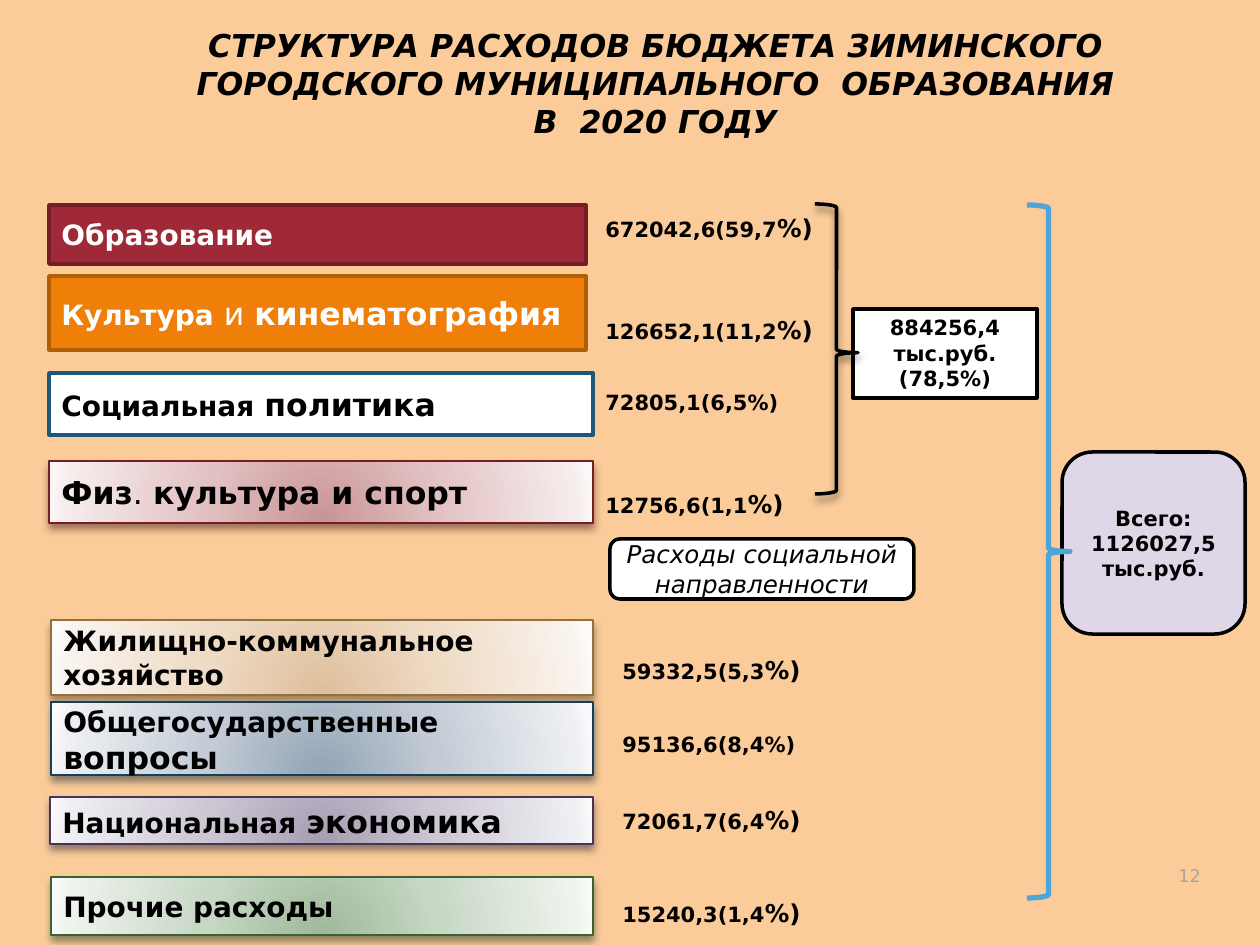
"""Builds the slide on the structure of city budget expenditure in 2020."""
from lxml import etree
from pptx import Presentation
from pptx.dml.color import RGBColor
from pptx.enum.shapes import MSO_SHAPE
from pptx.enum.text import MSO_ANCHOR, PP_ALIGN
from pptx.oxml.ns import qn
from pptx.util import Pt

RECT, ROUNDED, BRACE = MSO_SHAPE.RECTANGLE, MSO_SHAPE.ROUNDED_RECTANGLE, MSO_SHAPE.RIGHT_BRACE
TOP, MIDDLE, BOTTOM = MSO_ANCHOR.TOP, MSO_ANCHOR.MIDDLE, MSO_ANCHOR.BOTTOM
LEFT, CENTER, RIGHT = PP_ALIGN.LEFT, PP_ALIGN.CENTER, PP_ALIGN.RIGHT
PX = 914400 / 126
FONT = "DejaVu Sans"
BLACK, WHITE = "000000", "FFFFFF"
INSET, SMALL_LINE = 6, 24
GRADIENT_STOPS = (0, 43, 93, 100)

TITLE = ["СТРУКТУРА РАСХОДОВ БЮДЖЕТА ЗИМИНСКОГО ГОРОДСКОГО МУНИЦИПАЛЬНОГО  ОБРАЗОВАНИЯ",
         "В  2020 ГОДУ"]

# box, runs as (text, size, bold), text colour, fill or gradient, line colour, line width, shadow
SECTIONS = [
    ((49, 205, 537, 59), [("Образование", 16, True)], WHITE, "9F2936", "761E28", 2, None),
    ((49, 276, 537, 74), [("Культура", 16, True), (" и ", 18, False), ("кинематография", 18, True)],
     WHITE, "F07F09", "B25E07", 2, None),
    ((49, 373, 544, 62), [("Социальная", 16, True), (" ", 18, False), ("политика", 18, True)],
     BLACK, WHITE, "1B587C", 2, None),
    ((49, 461, 544, 62), [("Физ", 18, True), (". ", 18, False), ("культура и спорт", 18, True)],
     BLACK, ("C99396", "E2C1C2", "F6ECEC", "FDF8F8"), "771D27", 0.75, "390D12"),
    ((51, 620, 542, 75), [("Жилищно-коммунальное хозяйство", 16, True)],
     BLACK, ("DEBF9C", "EFDAC4", "F9F3ED", "FEFBF8"), "907141", 0.75, "45361E"),
    ((51, 702, 542, 73), [("Общегосударственные", 16, True), (" ", 18, False), ("вопросы", 18, True)],
     BLACK, ("94A3B5", "C3CCD6", "EDEFF2", "F9FAFB"), "13415D", 0.75, "091F2C"),
    ((50, 797, 543, 47), [("Национальная", 16, True), (" ", 18, False), ("экономика", 18, True)],
     BLACK, ("A69DB2", "CDC7D4", "EFEEF2", "FAF9FB"), "473559", 0.75, "22192B"),
    ((51, 877, 542, 58), [("Прочие расходы", 16, True)],
     BLACK, ("9EB99A", "C8D8C5", "EEF3ED", "F9FBF9"), "396330", 0.75, "1B2F17"),
]

# box, number, closing part, size of closing part, lines skipped above
AMOUNTS = [
    ((593, 207, 252, 43), "672042,6(59,7", "%)", 14, 0),
    ((593, 309, 252, 43), "126652,1(11,2", "%)", 14, 0),
    ((593, 360, 285, 89), "72805,1(6,5", "%)", 12, 1),
    ((593, 459, 237, 68), "12756,6(1,1", "%)", 14, 1),
    ((610, 625, 290, 68), "59332,5(5,3", "%)", 14, 1),
    ((610, 702, 255, 63), "95136,6(8,4", "%)", 12, 1),
    ((610, 775, 252, 68), "72061,7(6,4", "%)", 14, 1),
    ((610, 844, 255, 93), "15240,3(1,4", "%)", 14, 2),
]

# outline, box, paragraphs, fill, anchor, size, bold, italic
SUMMARIES = [
    (RECT, (853, 309, 184, 89), ["884256,4", "тыс.руб. (78,5%)"], WHITE, TOP, 12, True, False),
    (ROUNDED, (610, 539, 304, 60), ["Расходы социальной направленности"], WHITE, MIDDLE, 14, False, True),
    (ROUNDED, (1062, 452, 183, 182), ["Всего: 1126027,5", "тыс.руб."], "DFD7E7", MIDDLE, 12, True, False),
]

# box, colour, width, shadow, adjustments
BRACES = [
    ((1027, 205, 43, 693), "4EA5D8", 3, None, (0.083, 0.5)),
    ((815, 204, 43, 290), BLACK, 2, BLACK, (0.083, 0.513)),
]


def rgb(code):
    return RGBColor.from_string(code)


def emu(box):
    return [round(length * PX) for length in box]


def add_node(parent, tag, **attributes):
    return etree.SubElement(parent, qn(tag), {key: str(value) for key, value in attributes.items()})


def write(holder, paragraphs, color=BLACK, align=LEFT, anchor=TOP, italic=False, top=INSET):
    frame = holder.text_frame
    frame.word_wrap = True
    frame.vertical_anchor = anchor
    frame.margin_top = round(top * PX)
    for index, runs in enumerate(paragraphs):
        paragraph = frame.add_paragraph() if index else frame.paragraphs[0]
        paragraph.alignment = align
        for text, size, bold in runs:
            run = paragraph.add_run()
            run.text = text
            run.font.name, run.font.size = FONT, Pt(size)
            run.font.bold, run.font.italic = bold, italic
            run.font.color.rgb = rgb(color)


def fill_radial(shape, colors):
    shape.fill.gradient()
    gradient = shape._element.spPr.find(qn("a:gradFill"))
    gradient.clear()
    gradient.set("rotWithShape", "1")
    stops = add_node(gradient, "a:gsLst")
    for position, color in zip(GRADIENT_STOPS, colors):
        stop = add_node(stops, "a:gs", pos=position * 1000)
        add_node(stop, "a:srgbClr", val=color)
    circle = add_node(gradient, "a:path", path="circle")
    add_node(circle, "a:fillToRect", l=50000, t=130000, r=50000, b=-30000)


def cast_shadow(shape, color):
    effects = shape._element.spPr.find(qn("a:effectLst"))
    outer = add_node(effects, "a:outerShdw", blurRad=Pt(4.5), dist=Pt(3), dir=5400000, rotWithShape=0)
    add_node(add_node(outer, "a:srgbClr", val=color), "a:alpha", val=48000)


def add_outline(slide, kind, box, fill, line, width, shadow=None):
    shape = slide.shapes.add_shape(kind, *emu(box))
    shape.shadow.inherit = False
    if fill is None:
        shape.fill.background()
    elif isinstance(fill, tuple):
        fill_radial(shape, fill)
    else:
        shape.fill.solid()
        shape.fill.fore_color.rgb = rgb(fill)
    shape.line.color.rgb = rgb(line)
    shape.line.width = Pt(width)
    if shadow:
        cast_shadow(shape, shadow)
    return shape


def main():
    deck = Presentation()
    deck.slide_width, deck.slide_height = emu((1260, 945))
    slide = deck.slides.add_slide(deck.slide_layouts[6])
    slide.background.fill.solid()
    slide.background.fill.fore_color.rgb = rgb("FBCC9A")

    title = slide.shapes.add_textbox(*emu((105, 20, 1101, 127)))
    write(title, [[(line, 18, True)] for line in TITLE], align=CENTER, italic=True)
    page_number = slide.shapes.add_textbox(*emu((1150, 842, 63, 50)))
    write(page_number, [[("12", 10, False)]], color="A8A49B", align=RIGHT, anchor=BOTTOM)

    for box, runs, color, fill, line, width, shadow in SECTIONS:
        section = add_outline(slide, RECT, box, fill, line, width, shadow)
        write(section, [runs], color=color, anchor=MIDDLE)
    for box, number, closing, size, skipped in AMOUNTS:
        amount = slide.shapes.add_textbox(*emu(box))
        write(amount, [[(number, 12, True), (closing, size, True)]], top=INSET + skipped * SMALL_LINE)
    for kind, box, lines, fill, anchor, size, bold, italic in SUMMARIES:
        summary = add_outline(slide, kind, box, fill, BLACK, 2)
        write(summary, [[(line, size, bold)] for line in lines], align=CENTER, anchor=anchor, italic=italic)
    for box, color, width, shadow, adjustments in BRACES:
        brace = add_outline(slide, BRACE, box, None, color, width, shadow)
        for index, adjustment in enumerate(adjustments):
            brace.adjustments[index] = adjustment

    deck.save("out.pptx")


if __name__ == "__main__":
    main()
